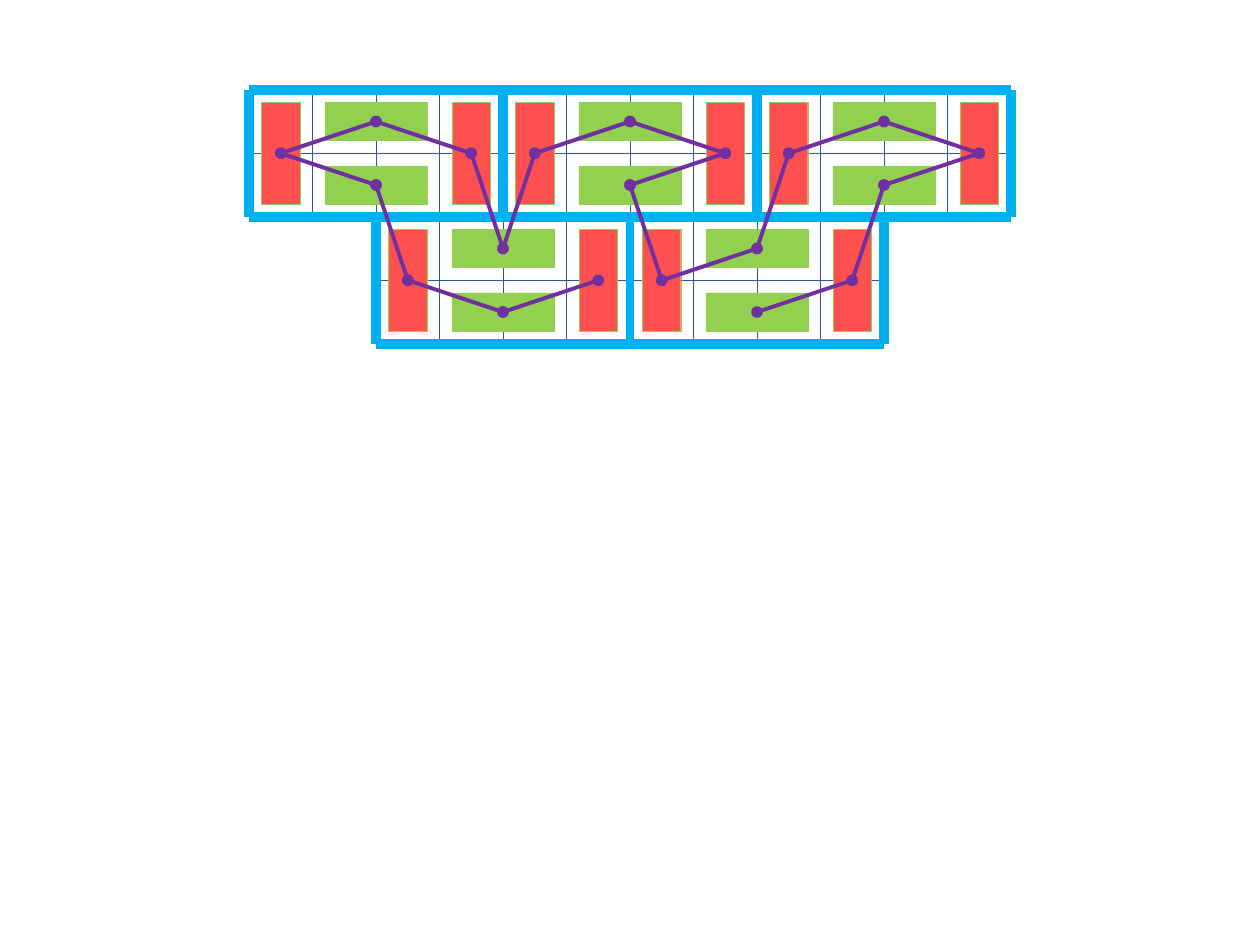
from lxml import etree
from pptx import Presentation
from pptx.dml.color import RGBColor
from pptx.enum.shapes import MSO_CONNECTOR as CONNECTOR, MSO_SHAPE as SHAPE
from pptx.oxml.ns import qn
from pptx.util import Cm, Pt


def paint(format_part, color):
    if hasattr(format_part, "solid"):
        format_part.solid()
        format_part.fore_color.rgb = RGBColor.from_string(color)
    else:
        format_part.color.rgb = RGBColor.from_string(color)


def add_line(start, end, color, width, ends=None):
    line = slide.shapes.add_connector(CONNECTOR.STRAIGHT, *[Cm(value) for value in (*start, *end)])
    paint(line.line, color)
    line.line.width = Pt(width)
    properties = line._element.spPr
    etree.SubElement(properties, qn("a:effectLst"))
    if ends:
        for tag in ("a:headEnd", "a:tailEnd"):
            etree.SubElement(line.line._ln, qn(tag), type=ends)


presentation = Presentation()
presentation.slide_width = Cm(25.4)
presentation.slide_height = Cm(19.05)
slide = presentation.slides.add_slide(presentation.slide_layouts[6])

cell = 1.28
brick_width, brick_height = 4 * cell, 2 * cell
left, top = 5.02, 1.81
middle, bottom = top + brick_height, top + 2 * brick_height
right = left + 3 * brick_width
lower_left, lower_right = left + brick_width / 2, right - brick_width / 2

bricks = [(left + column * brick_width, top) for column in range(3)]
bricks += [(lower_left + column * brick_width, middle) for column in range(2)]

bar_long, bar_short = 2.06, 0.77
bar_centers = {
    "left": (0.5 * cell, cell),
    "top": (2 * cell, 0.5 * cell),
    "bottom": (2 * cell, 1.5 * cell),
    "right": (3.5 * cell, cell),
}

for brick_x, brick_y in bricks:
    rectangles = [
        (brick_x + column * cell, brick_y + row * cell, cell, cell, "FFFFFF", "325491")
        for column in range(4) for row in range(2)
    ]
    for side, (x, y) in bar_centers.items():
        if side in ("left", "right"):
            width, height, color = bar_short, bar_long, "FF5050"
        else:
            width, height, color = bar_long, bar_short, "92D050"
        rectangles.append((brick_x + x - width / 2, brick_y + y - height / 2,
                           width, height, color, "92D050"))
    group = slide.shapes.add_group_shape()
    for x, y, width, height, fill_color, line_color in rectangles:
        shape = group.shapes.add_shape(SHAPE.RECTANGLE, Cm(x), Cm(y), Cm(width), Cm(height))
        shape.shadow.inherit = False
        paint(shape.fill, fill_color)
        paint(shape.line, line_color)
        shape.line.width = Pt(0.25)

borders = [
    ((left, top), (left, middle), 6),
    ((left, top), (right, top), 6),
    ((right, top), (right, middle), 6),
    ((left, middle), (right, middle), 6),
    ((lower_left, middle), (lower_left, bottom), 6),
    ((lower_right, middle), (lower_right, bottom), 6),
    ((lower_left, bottom), (lower_right, bottom), 6),
    ((left + brick_width, top), (left + brick_width, middle), 6),
    ((left + 2 * brick_width, top), (left + 2 * brick_width, middle), 6),
    ((lower_left + brick_width, middle), (lower_left + brick_width, bottom), 4.5),
]
for start, end, width in borders:
    add_line(start, end, "00B0F0", width)

route = [
    (3, "right"), (3, "bottom"), (3, "left"),
    (0, "bottom"), (0, "left"), (0, "top"), (0, "right"),
    (3, "top"),
    (1, "left"), (1, "top"), (1, "right"), (1, "bottom"),
    (4, "left"), (4, "top"),
    (2, "left"), (2, "top"), (2, "right"), (2, "bottom"),
    (4, "right"), (4, "bottom"),
]
points = [
    (bricks[brick][0] + bar_centers[side][0], bricks[brick][1] + bar_centers[side][1])
    for brick, side in route
]
for start, end in zip(points, points[1:]):
    add_line(start, end, "7030A0", 2.25, "oval")

presentation.save("out.pptx")
